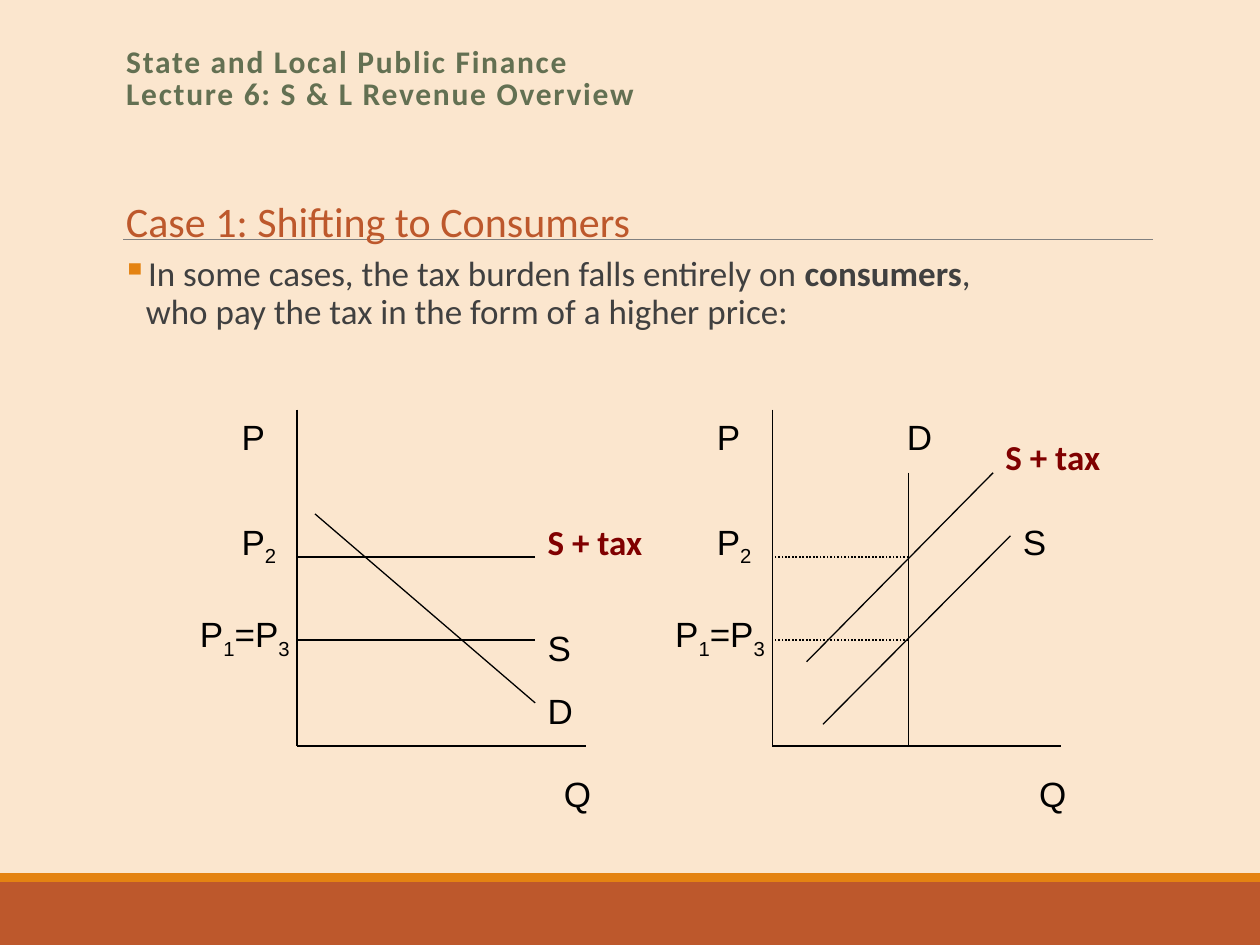
import itertools

import lxml.etree
import pptx
import pptx.dml.color
import pptx.enum.dml
import pptx.enum.shapes
import pptx.enum.text
import pptx.oxml.ns
import pptx.util

Cm = pptx.util.Cm
Pt = pptx.util.Pt
qn = pptx.oxml.ns.qn

AXIS_TOP, AXIS_BOTTOM, AXIS_WIDTH = 8.26, 15.04, 5.82
TAXED_PRICE, BASE_PRICE = 11.23, 12.9
SUPPLY_END = 4.8
LEFT_ORIGIN, RIGHT_ORIGIN = 5.99, 15.57


def color(value):
    """Return the RGB colour for a hex string."""
    return pptx.dml.color.RGBColor.from_string(value)


def set_font(paragraph, name, size, value, bold=False):
    """Format all text of a paragraph."""
    font = paragraph.font
    font.name, font.size, font.bold = name, Pt(size), bold
    font.color.rgb = color(value)


def add_bar(slide, top, height, fill):
    """Add a full-width band."""
    shape = slide.shapes.add_shape(
        pptx.enum.shapes.MSO_SHAPE.RECTANGLE, 0, Cm(top), Cm(25.4), Cm(height))
    shape.shadow.inherit = False
    shape.fill.solid()
    shape.fill.fore_color.rgb = color(fill)
    shape.line.fill.background()


def add_line(slide, start, end, value="000000", width=0.75, dotted=False):
    """Add a straight line between two points."""
    line = slide.shapes.add_connector(
        pptx.enum.shapes.MSO_CONNECTOR.STRAIGHT,
        *(Cm(length) for length in start + end))
    line.line.color.rgb = color(value)
    line.line.width = Pt(width)
    if dotted:
        line.line.dash_style = pptx.enum.dml.MSO_LINE.ROUND_DOT
    lxml.etree.SubElement(line._element.spPr, qn("a:effectLst"))


def add_text_box(slide, left, top, width, height, wrap=True):
    """Add a text box and return its text frame."""
    shape = slide.shapes.add_textbox(Cm(left), Cm(top), Cm(width), Cm(height))
    shape.text_frame.word_wrap = wrap
    return shape.text_frame


def add_label(slide, left, top, text):
    """Add a diagram label whose digits are subscripts."""
    paragraph = add_text_box(slide, left, top, 2.74, 1.27).paragraphs[0]
    if "tax" in text:
        set_font(paragraph, "Calibri", 20, "800000", True)
    else:
        set_font(paragraph, "Arial", 20, "000000")
    for is_subscript, characters in itertools.groupby(text, str.isdigit):
        run = paragraph.add_run()
        run.text = "".join(characters)
        if is_subscript:
            run._r.get_or_add_rPr().set("baseline", "-25000")


def add_diagram(slide, origin, curves, price_lines_end, dotted, labels):
    """Add axes, price lines, curves and labels at a horizontal origin."""
    add_line(slide, (origin, AXIS_TOP), (origin, AXIS_BOTTOM))
    add_line(slide, (origin, AXIS_BOTTOM), (origin + AXIS_WIDTH, AXIS_BOTTOM))
    for price in (TAXED_PRICE, BASE_PRICE):
        add_line(slide, (origin + price_lines_end, price), (origin, price),
                 width=1 if dotted else 0.75, dotted=dotted)
    for x1, y1, x2, y2 in curves:
        add_line(slide, (origin + x1, y1), (origin + x2, y2))
    axis_labels = [(-1.37, AXIS_TOP, "P"), (-1.37, 10.36, "P2"),
                   (-2.21, 12.23, "P1=P3"), (5.13, 15.44, "Q")]
    for x, y, text in axis_labels + labels:
        add_label(slide, origin + x, y, text)


def format_title(slide):
    """Fill and place the lecture title."""
    title = slide.shapes.title
    title.left, title.top, title.width, title.height = (
        Cm(length) for length in (2.29, 0.84, 20.96, 1.65))
    frame = title.text_frame
    frame.text = "State and Local Public Finance\vLecture 6: S & L Revenue Overview"
    frame.word_wrap = True
    frame.auto_size = pptx.enum.text.MSO_AUTO_SIZE.NONE
    frame.vertical_anchor = pptx.enum.text.MSO_ANCHOR.TOP
    paragraph = frame.paragraphs[0]
    paragraph.alignment = pptx.enum.text.PP_ALIGN.LEFT
    paragraph.line_spacing = 0.85
    set_font(paragraph, "Calibri", 18, "637052", True)
    for run in paragraph.runs:
        run._r.get_or_add_rPr().set("spc", "100")


def add_bullet(slide):
    """Add the bulleted statement."""
    frame = add_text_box(slide, 2.46, 5.05, 17.86, 1.04)
    frame.margin_left = frame.margin_right = 0
    paragraph = frame.paragraphs[0]
    paragraph.line_spacing = 0.9
    paragraph.space_before, paragraph.space_after = Pt(6.8), Pt(1.1)
    set_font(paragraph, "Calibri", 20, "404040")
    for text, bold in (("In some cases, the tax burden falls entirely on ", False),
                       ("consumers", True),
                       (", who pay the tax in the form of a higher price:", False)):
        run = paragraph.add_run()
        run.text, run.font.bold = text, bold
    properties = paragraph._p.get_or_add_pPr()
    properties.set("marL", str(Cm(0.48)))
    properties.set("indent", str(-Cm(0.48)))
    bullet_color = lxml.etree.Element(qn("a:buClr"))
    lxml.etree.SubElement(bullet_color, qn("a:srgbClr"), val="E48312")
    bullet = lxml.etree.Element(qn("a:buChar"), char="▪")
    defaults = properties.find(qn("a:defRPr"))
    defaults.addprevious(bullet_color)
    defaults.addprevious(bullet)


def add_case_heading(slide):
    """Add the case heading."""
    frame = add_text_box(slide, 2.29, 3.81, 11, 1.27, wrap=False)
    frame.text = "Case 1: Shifting to Consumers"
    set_font(frame.paragraphs[0], "Calibri", 24, "BD582C")


def main():
    """Build and save the presentation."""
    presentation = pptx.Presentation()
    presentation.slide_width, presentation.slide_height = Cm(25.4), Cm(19.05)
    slide = presentation.slides.add_slide(presentation.slide_layouts[5])
    slide.background.fill.solid()
    slide.background.fill.fore_color.rgb = color("FBE6CE")
    add_bar(slide, 17.78, 1.27, "BD582C")
    add_bar(slide, 17.6, 0.18, "E48312")
    add_line(slide, (2.48, 4.83), (23.24, 4.83), "808080", 0.5)
    format_title(slide)
    add_bullet(slide)
    add_diagram(slide, LEFT_ORIGIN, [(0.36, 10.36, SUPPLY_END, 14.17)],
                SUPPLY_END, False,
                [(SUPPLY_END, 10.36, "S + tax"), (SUPPLY_END, 12.5, "S"),
                 (SUPPLY_END, 13.77, "D")])
    demand = 2.74
    add_diagram(slide, RIGHT_ORIGIN,
                [(demand, 9.53, demand, AXIS_BOTTOM),
                 (0.69, 13.34, 4.45, 9.53), (1.02, 14.6, SUPPLY_END, 10.8)],
                demand, True,
                [(2.46, AXIS_TOP, "D"), (4.45, 8.66, "S + tax"),
                 (SUPPLY_END, 10.36, "S")])
    add_case_heading(slide)
    presentation.save("out.pptx")


if __name__ == "__main__":
    main()
